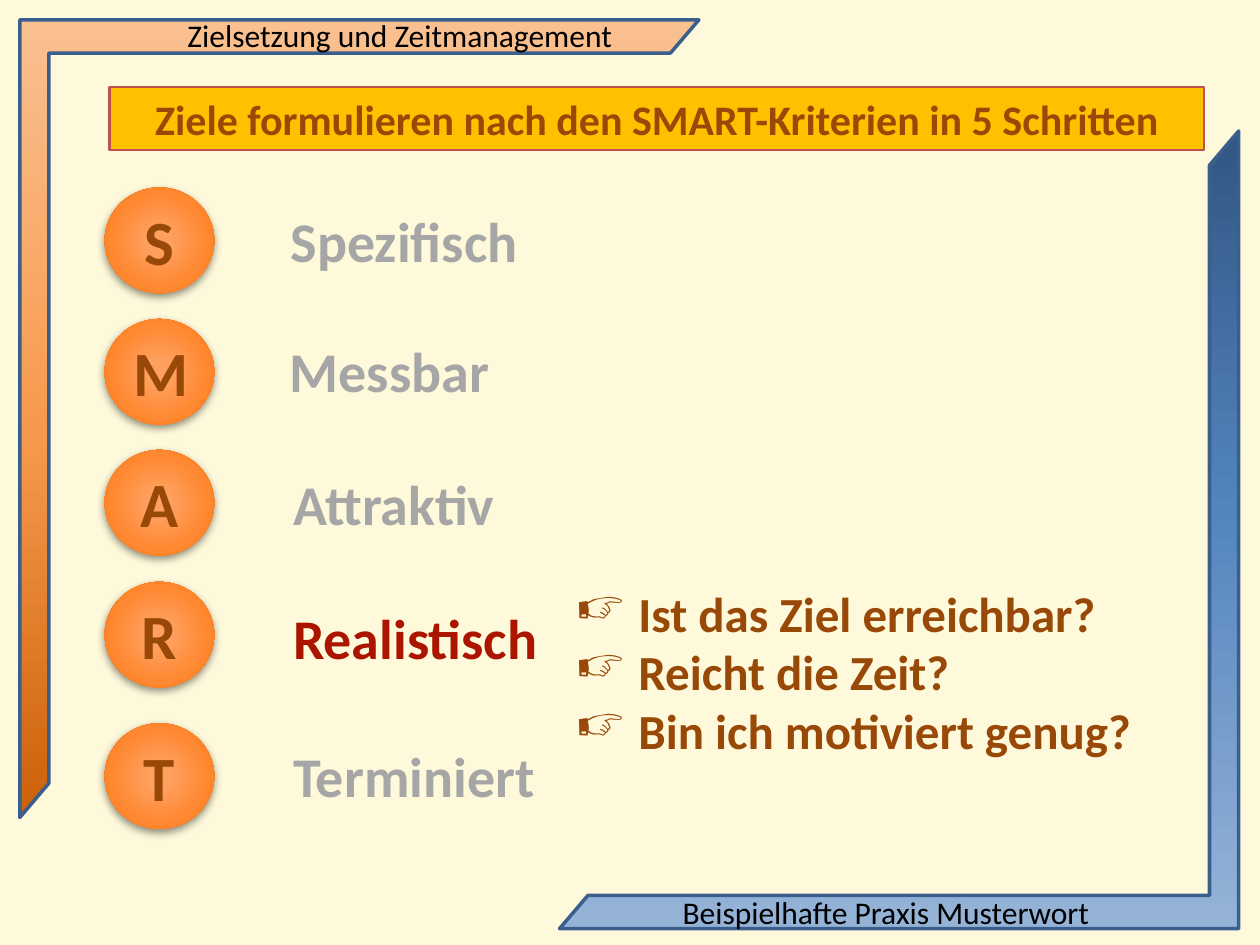
"""Build the SMART criteria slide with the step "Realistisch" in focus."""
import pptx
import pptx.dml.color
import pptx.enum.shapes
import pptx.enum.text
import pptx.oxml
import pptx.oxml.ns
import pptx.util

Cm, Pt = pptx.util.Cm, pptx.util.Pt
Rgb = pptx.dml.color.RGBColor.from_string
Kind = pptx.enum.shapes.MSO_SHAPE
Align = pptx.enum.text.PP_ALIGN
Fit = pptx.enum.text.MSO_AUTO_SIZE
Mid = pptx.enum.text.MSO_ANCHOR.MIDDLE
NS = pptx.oxml.ns.nsdecls("a")


class Theme:
    font = "Calibri"
    page, gold, edge, rim = "FEF9DA", "FFC000", "C0504D", "3A5F8C"
    black, brown, gray, red = "000000", "984807", "A6A6A6", "AB1500"
    warm = [(0, "CC6109"), (48, "F7994C"), (100, "FAC090")]
    cool = [(0, "315683"), (48, "5485BF"), (100, "95B3D7")]
    ball = [(0, "FFA061"), (15, "FFA05F"), (62, "FF8932"),
            (97, "FA7712"), (100, "FB7507")]
    small, head, item, word, mark = 18, 24, 28, 32, 36


def tint(shape, stops, aim):
    marks = "".join(f'<a:gs pos="{at * 1000}"><a:srgbClr val="{hue}"/></a:gs>'
                    for at, hue in stops)
    shape.fill.solid()
    props = shape.element.spPr
    props.replace(props.find(pptx.oxml.ns.qn("a:solidFill")), pptx.oxml.parse_xml(
        f'<a:gradFill {NS} rotWithShape="1"><a:gsLst>{marks}</a:gsLst>{aim}</a:gradFill>'))


def write(shape, lines, size, hue, bold=True, align=Align.LEFT, wrap=False, fit=Fit.SHAPE_TO_FIT_TEXT):
    frame = shape.text_frame
    frame.text = "\n".join(lines)
    frame.word_wrap = wrap
    frame.auto_size = fit
    for para in frame.paragraphs:
        para.alignment = align
        para.font.name = Theme.font
        para.font.size = Pt(size)
        para.font.bold = bold
        para.font.color.rgb = Rgb(hue)


deck = pptx.Presentation()
deck.slide_width, deck.slide_height = Cm(25.4), Cm(19.05)
slide = deck.slides.add_slide(deck.slide_layouts[6])
slide.background.fill.solid()
slide.background.fill.fore_color.rgb = Rgb(Theme.page)
shapes = slide.shapes

for left, top, turn, stops in [(0.4, 0.4, 0, Theme.warm), (11.28, 2.64, 180, Theme.cool)]:
    frame = shapes.add_shape(Kind.HALF_FRAME, Cm(left), Cm(top), Cm(13.69), Cm(16.08))
    frame.adjustments[0], frame.adjustments[1] = 0.049, 0.043
    frame.rotation = turn
    frame.shadow.inherit = False
    tint(frame, stops, '<a:lin ang="16200000" scaled="0"/>')
    frame.line.color.rgb = Rgb(Theme.rim)
    frame.line.width = Pt(2)

for left, top, text in [(3.53, 0.2, "Zielsetzung und Zeitmanagement"),
                        (13.51, 17.88, "Beispielhafte Praxis Musterwort")]:
    box = shapes.add_textbox(Cm(left), Cm(top), Cm(9.18), Cm(1.02))
    write(box, [text], Theme.small, Theme.black, bold=False)

title = shapes.add_shape(Kind.RECTANGLE, Cm(2.21), Cm(1.75), Cm(22.07), Cm(1.27))
title.shadow.inherit = False
title.fill.solid()
title.fill.fore_color.rgb = Rgb(Theme.gold)
title.line.color.rgb = Rgb(Theme.edge)
title.line.width = Pt(1.25)
write(title, ["Ziele formulieren nach den SMART-Kriterien in 5 Schritten"],
      Theme.head, Theme.brown, align=Align.CENTER, wrap=True)

steps = [("Spezifisch", 3.78, 5.61, 4.04, 5.13, Theme.gray),
         ("Messbar", 6.43, 5.59, 6.65, 4.57, Theme.gray),
         ("Attraktiv", 9.07, 5.66, 9.35, 4.65, Theme.gray),
         ("Realistisch", 11.73, 5.66, 12.04, 5.49, Theme.red),
         ("Terminiert", 14.58, 5.66, 14.83, 5.44, Theme.gray)]
for word, high, left, top, width, hue in steps:
    ball = shapes.add_shape(Kind.OVAL, Cm(2.11), Cm(high), Cm(2.21), Cm(2.13))
    tint(ball, Theme.ball, '<a:path path="circle"><a:fillToRect l="50000" t="50000" '
                           'r="50000" b="50000"/></a:path>')
    ball.line.fill.background()
    ball.shadow.inherit = False
    ball.element.spPr.find(pptx.oxml.ns.qn("a:effectLst")).append(pptx.oxml.parse_xml(
        f'<a:outerShdw {NS} blurRad="{Pt(5)}" dist="{Pt(2)}" dir="5400000" rotWithShape="0">'
        f'<a:srgbClr val="{Theme.black}"><a:alpha val="43000"/></a:srgbClr></a:outerShdw>'))
    write(ball, [word[0]], Theme.mark, Theme.brown, align=Align.CENTER, wrap=True, fit=Fit.NONE)
    ball.text_frame.vertical_anchor = Mid
    label = shapes.add_textbox(Cm(left), Cm(top), Cm(width), Cm(1.63))
    write(label, [word], Theme.word, hue)

asks = shapes.add_textbox(Cm(11.35), Cm(11.63), Cm(12.95), Cm(3.84))
write(asks, ["Ist das Ziel erreichbar?", "Reicht die Zeit?", "Bin ich motiviert genug?"],
      Theme.item, Theme.brown, wrap=True)
for para in asks.text_frame.paragraphs:
    props = para._p.get_or_add_pPr()
    props.set("marL", str(Cm(1.27)))
    props.set("indent", str(-Cm(1.27)))
    props.insert(0, pptx.oxml.parse_xml(f'<a:buChar {NS} char="☞"/>'))

deck.save("out.pptx")
